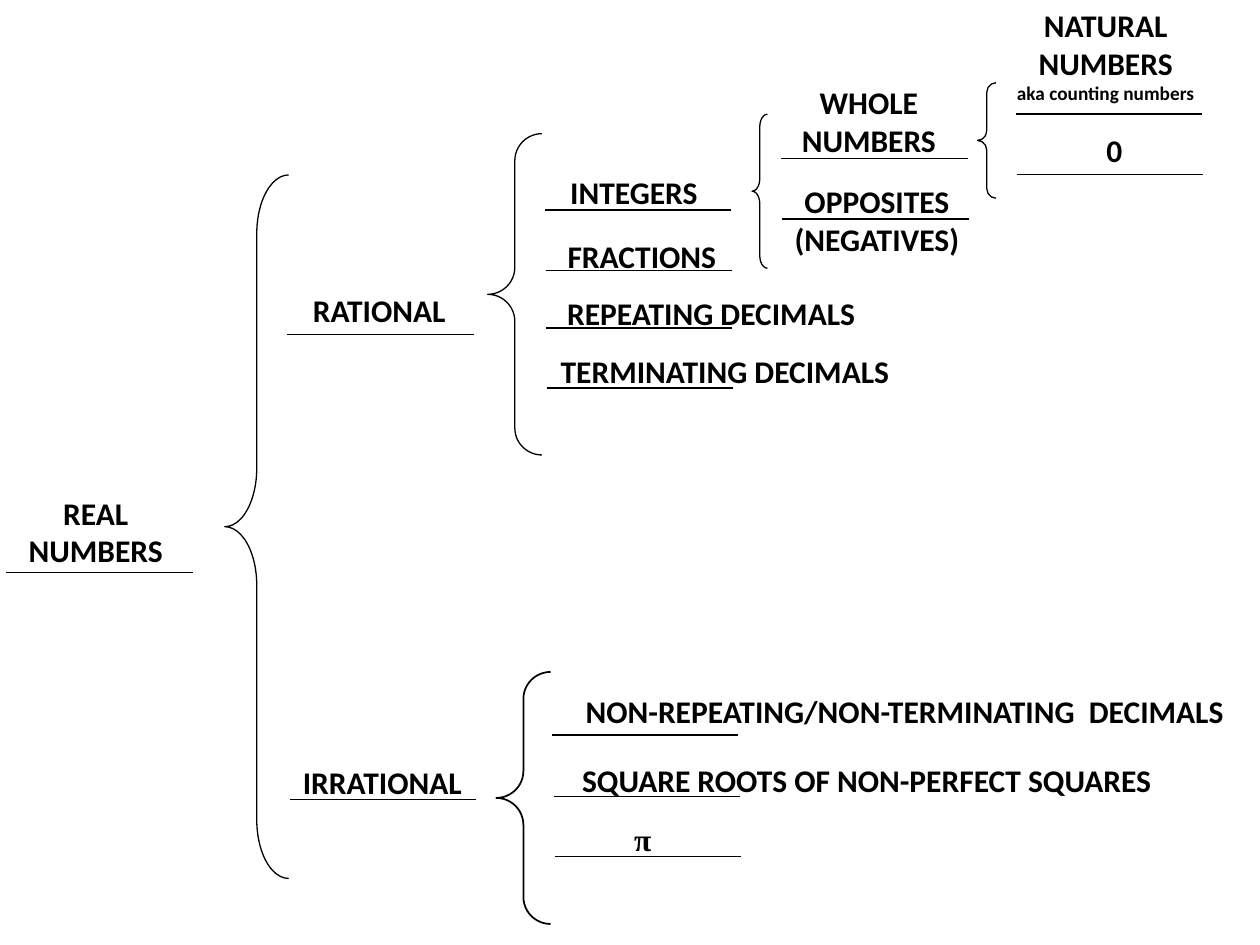
from dataclasses import dataclass

from lxml.etree import SubElement
from pptx import Presentation
from pptx.dml.color import RGBColor
from pptx.enum.shapes import MSO_CONNECTOR, MSO_SHAPE
from pptx.enum.text import MSO_AUTO_SIZE, PP_ALIGN
from pptx.oxml.ns import qn
from pptx.util import Pt


@dataclass(frozen=True)
class Theme:
    ink: RGBColor = RGBColor(0, 0, 0)
    font: str = "Calibri"
    symbol_font: str = "Times New Roman"
    label_size: float = 18
    note_size: float = 11
    line_width: float = 0.75
    blank_width: float = 106.5


class NumberTree:
    def __init__(self, slide, theme):
        self.shapes = slide.shapes
        self.theme = theme

    def brace(self, left, top, width, height, curve, weight=None):
        brace = self.shapes.add_shape(
            MSO_SHAPE.LEFT_BRACE, Pt(left), Pt(top), Pt(width), Pt(height))
        brace.adjustments[0] = curve
        brace.adjustments[1] = 0.5
        brace.shadow.inherit = False
        brace.fill.background()
        brace.line.color.rgb = self.theme.ink
        brace.line.width = Pt(weight or self.theme.line_width)

    def blank(self, left, y):
        """Draw the answer line below a label."""
        rule = self.shapes.add_connector(
            MSO_CONNECTOR.STRAIGHT,
            Pt(left), Pt(y), Pt(left + self.theme.blank_width), Pt(y))
        rule.line.color.rgb = self.theme.ink
        rule.line.width = Pt(self.theme.line_width)
        SubElement(rule._element.spPr, qn("a:effectLst"))

    def label(self, text, left, top, width, height=28.8, font=None):
        box = self.shapes.add_textbox(Pt(left), Pt(top), Pt(width), Pt(height))
        frame = box.text_frame
        frame.word_wrap = True
        frame.auto_size = MSO_AUTO_SIZE.SHAPE_TO_FIT_TEXT
        frame.text = text
        for paragraph in frame.paragraphs:
            paragraph.alignment = PP_ALIGN.CENTER
            for run in paragraph.runs:
                run.font.name = font or self.theme.font
                run.font.size = Pt(self.theme.label_size)
                run.font.bold = True
                run.font.color.rgb = self.theme.ink
        return frame


def main():
    deck = Presentation()
    deck.slide_width, deck.slide_height = Pt(720), Pt(540)
    theme = Theme()
    tree = NumberTree(deck.slides.add_slide(deck.slide_layouts[6]), theme)

    # Braces: real, rational, irrational, integers, whole numbers
    tree.brace(128.5, 100, 36.5, 402, 0.919)
    tree.brace(278.7, 76.4, 31, 183.6, 0.498)
    tree.brace(283.6, 384, 31, 144, 0.498, weight=1)
    tree.brace(429.8, 65.3, 8.8, 88, 0.812)
    tree.brace(558.6, 47.3, 10.6, 66, 0.524)

    # Answer lines, by column
    for left, y in [
        (3.6, 327),
        (164.2, 191), (165.6, 457),
        (311.2, 120), (311.8, 154.6), (312, 187.4), (312.5, 221.8),
        (315.5, 420), (316.4, 455), (317.2, 489.6),
        (446.4, 90.5), (447, 125.2),
        (580.5, 65.2), (581, 99.8),
    ]:
        tree.blank(left, y)

    # Real numbers and their two families
    two_lines = 50.4
    tree.label("REAL\nNUMBERS", -2.2, 278.6, 113.8, two_lines)
    tree.label("RATIONAL", 159.8, 162.7, 113.8)
    tree.label("IRRATIONAL", 152.6, 432.7, 131.8)

    # Rational members
    tree.label("INTEGERS", 305.3, 95.3, 113.8)
    tree.label("FRACTIONS", 303.8, 131.8, 126)
    tree.label("REPEATING DECIMALS", 289.4, 164.2, 234)
    tree.label("TERMINATING DECIMALS", 282.2, 197.6, 264.2)

    # Irrational members
    tree.label("NON-REPEATING/NON-TERMINATING  DECIMALS", 290.9, 391.7, 452.2)
    tree.label("SQUARE ROOTS OF NON-PERFECT SQUARES", 282.2, 431.5, 426.2)
    tree.label("π", 310.3, 465.1, 113.8, font=theme.symbol_font)

    # Integer members
    tree.label("WHOLE NUMBERS", 430.6, 43.9, 131.8, two_lines)
    tree.label("OPPOSITES\n(NEGATIVES)", 419, 100.5, 164.2, two_lines)

    # Whole number members
    natural = tree.label("NATURAL NUMBERS\vaka counting numbers",
                         565.9, 0, 131.8, 64)
    natural.paragraphs[0].runs[-1].font.size = Pt(theme.note_size)
    tree.label("0", 573.8, 71.5, 126)

    deck.save("out.pptx")


if __name__ == "__main__":
    main()
